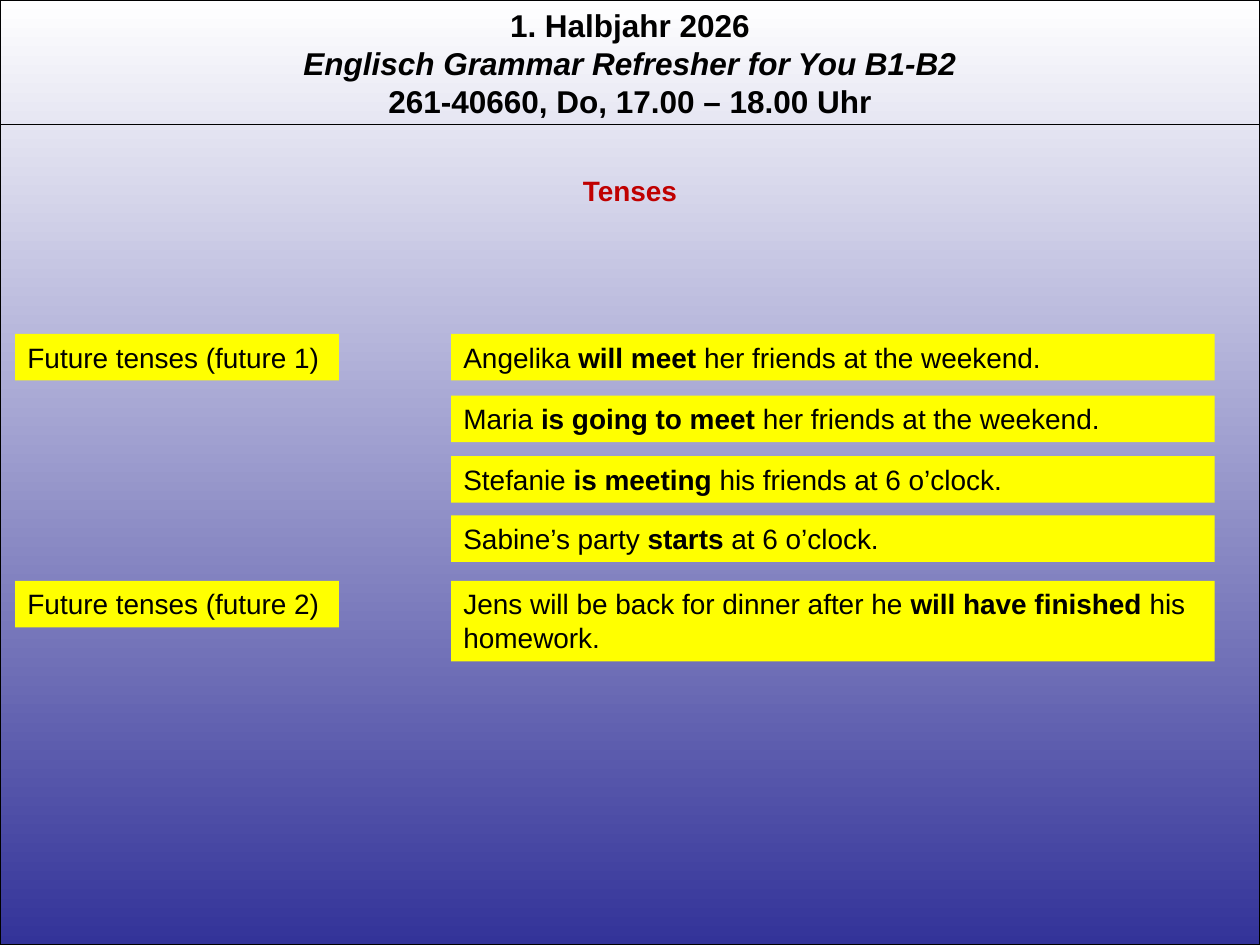
from dataclasses import dataclass

from lxml import etree
from pptx import Presentation
from pptx.dml.color import RGBColor
from pptx.enum.shapes import MSO_CONNECTOR, MSO_SHAPE
from pptx.enum.text import MSO_ANCHOR, MSO_AUTO_SIZE, PP_ALIGN
from pptx.oxml.ns import qn
from pptx.util import Inches, Pt

RECTANGLE = MSO_SHAPE.RECTANGLE
STRAIGHT = MSO_CONNECTOR.STRAIGHT
TOP = MSO_ANCHOR.TOP
FIT_SHAPE = MSO_AUTO_SIZE.SHAPE_TO_FIT_TEXT
LEFT, CENTER = PP_ALIGN.LEFT, PP_ALIGN.CENTER


@dataclass(frozen=True)
class Theme:
    font: str = "Arial"
    black: RGBColor = RGBColor(0x00, 0x00, 0x00)
    white: RGBColor = RGBColor(0xFF, 0xFF, 0xFF)
    indigo: RGBColor = RGBColor(0x33, 0x33, 0x99)
    red: RGBColor = RGBColor(0xC0, 0x00, 0x00)
    yellow: RGBColor = RGBColor(0xFF, 0xFF, 0x00)
    header_size: Pt = Pt(18)
    body_size: Pt = Pt(16)
    line_width: Pt = Pt(0.75)


THEME = Theme()
WIDTH, HEIGHT = 10, 7.5
HEADER_LINE_Y = 0.99
LABEL_LEFT, LABEL_WIDTH = 0.12, 2.57
EXAMPLE_LEFT, EXAMPLE_WIDTH = 3.58, 6.06
ROW_HEIGHT, TALL_ROW_HEIGHT = 0.37, 0.64

HEADER = [
    ("1. Halbjahr 2026", False),
    ("Englisch Grammar Refresher for You B1-B2", True),
    ("261-40660, Do, 17.00 – 18.00 Uhr", False),
]

# Top, row height, label, and example split as before / verb form / after
ROWS = [
    (2.65, ROW_HEIGHT, "Future tenses (future 1)",
     ("Angelika ", "will meet ", "her friends at the weekend.")),
    (3.14, ROW_HEIGHT, None,
     ("Maria ", "is going to meet ", "her friends at the weekend.")),
    (3.62, ROW_HEIGHT, None,
     ("Stefanie ", "is meeting ", "his friends at 6 o’clock.")),
    (4.09, ROW_HEIGHT, None,
     ("Sabine’s party ", "starts", " at 6 o’clock.")),
    (4.61, TALL_ROW_HEIGHT, "Future tenses (future 2)",
     ("Jens will be back for dinner after he ", "will have finished ",
      "his homework.")),
]


def set_attributes(target, values):
    for name, value in values.items():
        setattr(target, name, value)


def add_run(paragraph, text, color=THEME.black, **font_values):
    run = paragraph.add_run()
    run.text = text
    set_attributes(run.font, {"name": THEME.font, "size": THEME.body_size,
                              "bold": False, "italic": False} | font_values)
    run.font.color.rgb = color


def prepare_frame(shape):
    frame = shape.text_frame
    set_attributes(frame, {"word_wrap": True, "vertical_anchor": TOP,
                           "auto_size": FIT_SHAPE})
    return frame


def add_backdrop(slide):
    shape = slide.shapes.add_shape(RECTANGLE, 0, 0, Inches(WIDTH), Inches(HEIGHT))
    shape.shadow.inherit = False
    shape.fill.gradient()
    shape.fill.gradient_angle = 270
    stops = zip(shape.fill.gradient_stops, (0, 1), (THEME.white, THEME.indigo))
    for stop, position, color in stops:
        stop.position = position
        stop.color.rgb = color
    shape.line.color.rgb = THEME.black
    shape.line.width = THEME.line_width


def add_header(slide):
    box = slide.shapes.add_textbox(0, 0, Inches(WIDTH), Inches(1.01))
    frame = prepare_frame(box)
    for index, (text, italic) in enumerate(HEADER):
        paragraph = frame.add_paragraph() if index else frame.paragraphs[0]
        paragraph.alignment = CENTER
        add_run(paragraph, text, size=THEME.header_size, bold=True, italic=italic)

    y = Inches(HEADER_LINE_Y)
    rule = slide.shapes.add_connector(STRAIGHT, 0, y, Inches(WIDTH), y)
    rule.line.color.rgb = THEME.black
    rule.line.width = THEME.line_width
    etree.SubElement(rule._element.spPr, qn("a:effectLst"))


def add_title(slide, text):
    title = slide.shapes.title
    set_attributes(title, {"left": 0, "top": Inches(1.33),
                           "width": Inches(WIDTH), "height": Inches(ROW_HEIGHT)})
    paragraph = prepare_frame(title).paragraphs[0]
    paragraph.alignment = CENTER
    add_run(paragraph, text, color=THEME.red, bold=True)
    # Bring the title in front of the backdrop
    slide.shapes._spTree.append(title._element)


def add_yellow_box(slide, left, top, width, height, parts):
    shape = slide.shapes.add_shape(RECTANGLE, Inches(left), Inches(top),
                                   Inches(width), Inches(height))
    shape.shadow.inherit = False
    shape.fill.solid()
    shape.fill.fore_color.rgb = THEME.yellow
    shape.line.fill.background()
    paragraph = prepare_frame(shape).paragraphs[0]
    paragraph.alignment = LEFT
    for index, text in enumerate(parts):
        add_run(paragraph, text, bold=index == 1)


def main():
    presentation = Presentation()
    presentation.slide_width = Inches(WIDTH)
    presentation.slide_height = Inches(HEIGHT)
    slide = presentation.slides.add_slide(presentation.slide_layouts[5])

    # Backdrop, course header and title
    add_backdrop(slide)
    add_header(slide)
    add_title(slide, "Tenses")

    # Tense labels and example sentences
    for top, height, label, example in ROWS:
        if label:
            add_yellow_box(slide, LABEL_LEFT, top, LABEL_WIDTH, ROW_HEIGHT, [label])
        add_yellow_box(slide, EXAMPLE_LEFT, top, EXAMPLE_WIDTH, height, example)

    presentation.save("out.pptx")


if __name__ == "__main__":
    main()
